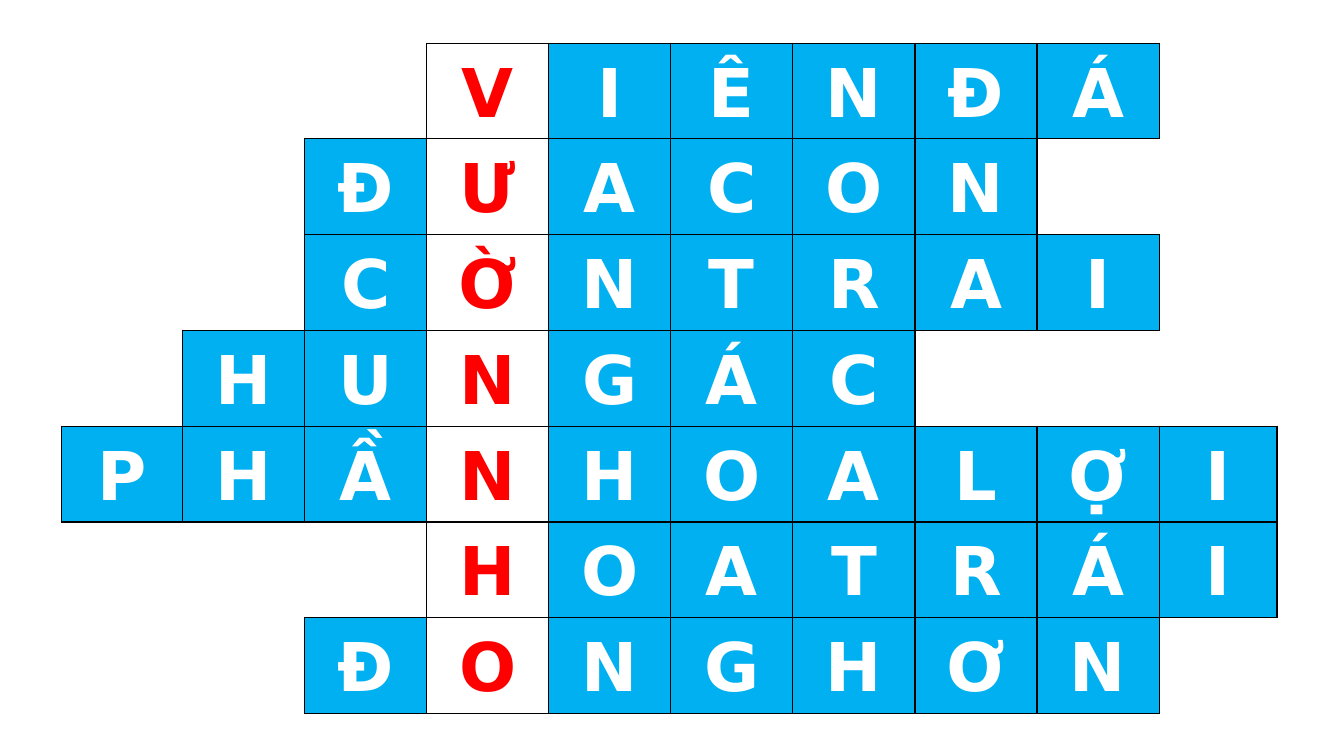
"""Build a crossword slide whose highlighted column spells the key word."""
from lxml import etree
from pptx import Presentation
from pptx.dml.color import RGBColor
from pptx.enum.text import MSO_ANCHOR, PP_ALIGN
from pptx.oxml.ns import qn
from pptx.util import Pt

CENTER = PP_ALIGN.CENTER
MIDDLE = MSO_ANCHOR.MIDDLE
COLORS = {"cell": "00B0F0", "letter": "FFFFFF", "key": "FF0000", "border": "000000"}
KEY_COLUMN = 3
COLUMN_WIDTHS = [86.4] + [87.2] * 8 + [84.2]
ROW_HEIGHT = 68.4
WORDS = [
    (3, "VIÊNĐÁ"),
    (2, "ĐƯACON"),
    (2, "CỜNTRAI"),
    (1, "HUNGÁC"),
    (0, "PHẦNHOALỢI"),
    (3, "HOATRÁI"),
    (2, "ĐONGHƠN"),
]


class CrosswordSlide:
    """Holds the slide and the style of its crossword."""

    def __init__(self, slide, font="DejaVu Sans", size=48):
        self.slide = slide
        self.font = font
        self.size = size

    def add_border(self, cell, side, visible):
        """Draw or clear one side of a cell."""
        properties = cell._tc.get_or_add_tcPr()
        line = etree.SubElement(properties, qn(f"a:ln{side}"), w=str(Pt(1)))
        if visible:
            fill = etree.SubElement(line, qn("a:solidFill"))
            etree.SubElement(fill, qn("a:srgbClr"), val=COLORS["border"])
        else:
            etree.SubElement(line, qn("a:noFill"))

    def add_letter(self, cell, letter, is_key):
        """Write one letter and color its cell."""
        cell.vertical_anchor = MIDDLE
        cell.margin_left = cell.margin_right = Pt(5)
        cell.margin_top = cell.margin_bottom = Pt(0)
        if not is_key:
            cell.fill.solid()
            cell.fill.fore_color.rgb = RGBColor.from_string(COLORS["cell"])
        para = cell.text_frame.paragraphs[0]
        para.alignment = CENTER
        para.line_spacing = 1.07
        para.space_after = Pt(8)
        span = para.add_run()
        span.text = letter
        span.font.name = self.font
        span.font.size = Pt(self.size)
        span.font.bold = True
        color = COLORS["key" if is_key else "letter"]
        span.font.color.rgb = RGBColor.from_string(color)

    def add_crossword(self, left, top, words):
        """Add the table, with borders only around lettered cells."""
        letters = {
            (row, start + offset): letter
            for row, (start, word) in enumerate(words)
            for offset, letter in enumerate(word)
        }
        frame = self.slide.shapes.add_table(
            len(words), len(COLUMN_WIDTHS), Pt(left), Pt(top),
            Pt(sum(COLUMN_WIDTHS)), Pt(ROW_HEIGHT * len(words)))
        table = frame.table
        table.first_row = table.horz_banding = False
        for column, width in zip(table.columns, COLUMN_WIDTHS):
            column.width = Pt(width)
        for row, table_row in enumerate(table.rows):
            table_row.height = Pt(ROW_HEIGHT)
            for column, cell in enumerate(table_row.cells):
                place = (row, column)
                neighbors = {
                    "L": (row, column - 1), "R": (row, column + 1),
                    "T": (row - 1, column), "B": (row + 1, column),
                }
                for side, neighbor in neighbors.items():
                    self.add_border(cell, side, place in letters or neighbor in letters)
                if place in letters:
                    self.add_letter(cell, letters[place], column == KEY_COLUMN)
                if place not in letters or column == KEY_COLUMN:
                    cell.fill.background()


def main():
    """Create and save the deck."""
    deck = Presentation()
    deck.slide_width, deck.slide_height = Pt(960), Pt(540)
    page = CrosswordSlide(deck.slides.add_slide(deck.slide_layouts[6]))
    page.add_crossword(44, 30.8, WORDS)
    deck.save("out.pptx")


if __name__ == "__main__":
    main()
